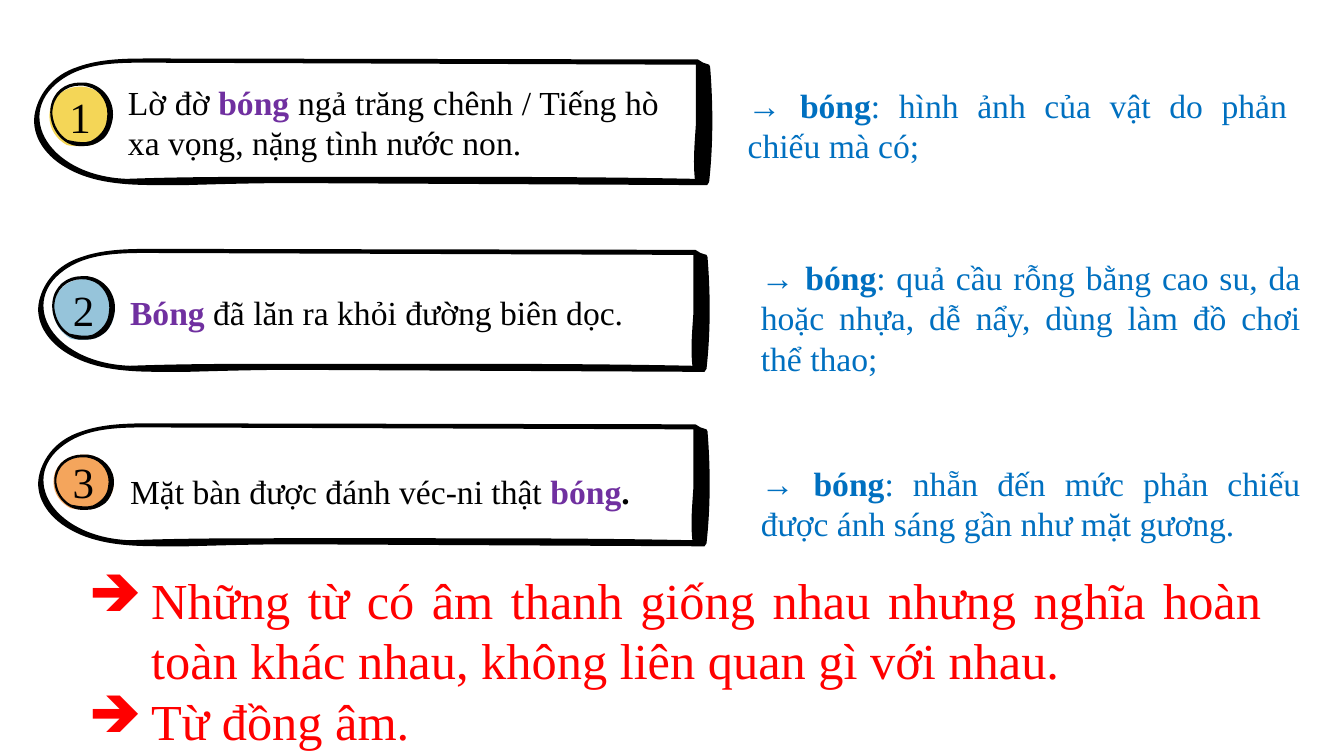
from dataclasses import dataclass
from typing import Any

import lxml.etree
import pptx
import pptx.dml.color
import pptx.enum.text
import pptx.oxml
import pptx.oxml.ns
import pptx.util

COLORS = {
    "ink": "000000",
    "keyword": "7030A0",
    "meaning": "0070C0",
    "conclusion": "FF0000",
    "yellow": "F4D657",
    "blue": "96C4DA",
    "orange": "F4A55C",
}
FONT = "Times New Roman"
ALIGN = pptx.enum.text.PP_ALIGN
ANCHOR = pptx.enum.text.MSO_ANCHOR
WIDE_INSET = 9.4
HANGING = 44.6

Contour = list[tuple[float, ...]]

BANNER: list[Contour] = [
    [
        (78.1, 0),
        (62.3, 0, 45.7, 0.7, 31.3, 5.8),
        (13.3, 11.5, 4, 24.5, 1.1, 36.7),
        (-2.5, 51.1, 6.1, 66.2, 22.7, 75.6),
        (41.4, 86.4, 64.4, 87.8, 87.5, 87.8),
        (107.6, 87.8),
        (132.8, 87.1, 157.3, 86.4, 182.5, 86.4),
        (469.1, 87.8), (476.3, 87.8), (477.7, 85.7),
        (480.6, 59.8, 480.6, 32.4, 478.4, 5.8),
        (477.7, 4.3), (473.4, 2.9), (469.8, 0.7), (95.4, 0),
    ],
    [
        (76.7, 2.9), (468.4, 4.3), (468.4, 44.6),
        (467.6, 57.6, 466.2, 70.6, 467.6, 83.5),
        (400, 82.1, 332.3, 82.1, 264.6, 82.1),
        (179.6, 82.1),
        (141.5, 82.1, 104, 82.1, 65.9, 83.5),
        (7.6, 81.4, -17.6, 33.1, 26.3, 10.8),
        (40.7, 3.6, 58.7, 2.9, 76.7, 2.9),
    ],
]
DISC: list[Contour] = [
    [
        (21.6, 0),
        (10.1, 0, 0, 7.9, 0, 21.6),
        (0, 31, 5, 38.2, 12.2, 42.5),
        (17, 43.7, 24, 43.7, 29.5, 42.5),
        (36, 40.3, 41.8, 34.6, 43.2, 26.6),
        (45.4, 15.1, 38.2, 3.6, 27.4, 0.7),
        (25.2, 0, 23.8, 0, 21.6, 0),
    ],
]
RING: list[Contour] = [
    [
        (20.9, 0),
        (10.8, 0, 1.4, 6.5, 0, 18.7),
        (-1.4, 32.4, 8.6, 45.4, 20.9, 45.4),
        (23.8, 45.4),
        (28.8, 45.4, 33.1, 43.9, 36.7, 41),
        (41, 38.2, 43.9, 31, 44.6, 25.2),
        (46.1, 11.5, 36, 1.4, 25.2, 0),
    ],
    [
        (20.9, 2.2),
        (23, 2.2, 24.5, 2.2, 26.6, 2.9),
        (36, 5, 42.5, 15.8, 40.3, 26.6),
        (39.6, 33.8, 34.6, 38.9, 28.8, 41.8),
        (24.5, 43.2, 18.7, 42.5, 12.2, 41),
        (6.5, 37.4, 2.2, 31, 1.4, 22.3),
        (1.4, 9.4, 10.8, 2.2, 20.9, 2.2),
    ],
]


@dataclass(frozen=True)
class Placement:
    left: float
    top: float
    x_scale: float = 1
    y_scale: float = 1

    def locate(self, x: float, y: float) -> tuple[int, int]:
        return (pptx.util.Pt(self.left + x * self.x_scale), pptx.util.Pt(self.top + y * self.y_scale))


@dataclass(frozen=True)
class Box:
    left: float
    top: float
    width: float
    height: float


@dataclass(frozen=True)
class Run:
    text: str
    color: str = "ink"
    bold: bool = False


@dataclass(frozen=True)
class Example:
    number: str
    color: str
    disc: Placement
    ring: Placement
    banner: Placement
    sentence_box: Box
    sentence: list[Run]
    sentence_align: Any
    meaning_box: Box
    meaning: str


EXAMPLES = [
    Example("1", "yellow", Placement(35.3, 61.9, 1.02, 0.98), Placement(36, 59),
            Placement(24.1, 41.8, 1.01, 1.03), Box(82, 49, 398, 36),
            [Run("Lờ đờ "), Run("bóng ", "keyword", True),
             Run("ngả trăng chênh / Tiếng hò xa vọng, nặng tình nước non.")],
            ALIGN.JUSTIFY, Box(527, 56.9, 399.6, 65.5),
            ": hình ảnh của vật do phản chiếu mà có;"),
    Example("2", "blue", Placement(38.2, 199.4), Placement(37.4, 197.3),
            Placement(27, 177.8), Box(83.5, 199.4, 437.8, 36),
            [Run("Bóng ", "keyword", True), Run("đã lăn ra khỏi đường biên dọc.")],
            ALIGN.LEFT, Box(536.4, 180, 399.6, 94.3),
            ": quả cầu rỗng bằng cao su, da hoặc nhựa, dễ nẩy, dùng làm đồ chơi thể thao;"),
    Example("3", "orange", Placement(38.2, 324.7, 0.99, 0.9), Placement(38.9, 324.7, 0.95, 0.87),
            Placement(27, 302.4), Box(83.5, 326.9, 437.8, 36),
            [Run("Mặt bàn được đánh véc-ni thật "), Run("bóng", "keyword", True),
             Run(".", "ink", True)],
            ALIGN.LEFT, Box(536.4, 326.9, 399.6, 65.5),
            ": nhẵn đến mức phản chiếu được ánh sáng gần như mặt gương."),
]
CONCLUSIONS = [
    "Những từ có âm thanh giống nhau nhưng nghĩa hoàn toàn khác nhau, không liên quan gì với nhau.",
    "Từ đồng âm.",
]


def rgb(color: str) -> pptx.dml.color.RGBColor:
    return pptx.dml.color.RGBColor.from_string(COLORS[color])


def apply_format(target: Any, values: dict[str, Any]) -> None:
    for attribute, value in values.items():
        setattr(target, attribute, value)


def bend(outline: Any, contours: list[Contour], place: Placement) -> None:
    qn = pptx.oxml.ns.qn
    segments = [segment for contour in contours for segment in contour[1:]]
    lines = list(outline._element.iter(qn("a:lnTo")))
    for line, segment in zip(lines, segments):
        if len(segment) == 2:
            continue
        curve = lxml.etree.Element(qn("a:cubicBezTo"))
        for x, y in zip(segment[::2], segment[1::2]):
            across, down = place.locate(x, y)
            lxml.etree.SubElement(curve, qn("a:pt"), x=str(across - outline.left), y=str(down - outline.top))
        line.getparent().replace(line, curve)


def draw_outline(shapes: Any, contours: list[Contour], place: Placement, color: str) -> Any:
    first, *holes = [[place.locate(*segment[-2:]) for segment in contour] for contour in contours]
    builder = shapes.build_freeform(*first[0])
    builder.add_line_segments(first[1:], close=True)
    for hole in holes:
        builder.move_to(*hole[0])
        builder.add_line_segments(hole[1:], close=True)
    outline = builder.convert_to_shape()
    bend(outline, contours, place)
    outline.shadow.inherit = False
    outline.fill.solid()
    outline.fill.fore_color.rgb = rgb(color)
    outline.line.fill.background()
    return outline


def write(frame: Any, paragraphs: list[list[Run]], size: float, align: Any, anchor: Any,
          inset: float | None = None) -> None:
    apply_format(frame, {"word_wrap": True, "vertical_anchor": anchor})
    if inset is not None:
        sides = ("margin_left", "margin_top", "margin_right", "margin_bottom")
        apply_format(frame, dict.fromkeys(sides, pptx.util.Pt(inset)))
    for index, runs in enumerate(paragraphs):
        paragraph = frame.add_paragraph() if index else frame.paragraphs[0]
        paragraph.alignment = align
        for part in runs:
            run = paragraph.add_run()
            run.text = part.text
            apply_format(run.font, {"name": FONT, "size": pptx.util.Pt(size), "bold": part.bold})
            run.font.color.rgb = rgb(part.color)


def add_text(shapes: Any, box: Box) -> Any:
    return shapes.add_textbox(*map(pptx.util.Pt, (box.left, box.top, box.width, box.height))).text_frame


def add_arrow_bullet(paragraph: Any) -> None:
    properties = paragraph._p.get_or_add_pPr()
    properties.set("marL", str(pptx.util.Pt(HANGING)))
    properties.set("indent", str(-pptx.util.Pt(HANGING)))
    lxml.etree.SubElement(properties, pptx.oxml.ns.qn("a:buChar"), char="➔")


def draw_example(shapes: Any, example: Example) -> None:
    disc = draw_outline(shapes, DISC, example.disc, example.color)
    write(disc.text_frame, [[Run(example.number)]], 30.7, ALIGN.CENTER, ANCHOR.MIDDLE, WIDE_INSET)
    draw_outline(shapes, RING, example.ring, "ink")
    draw_outline(shapes, BANNER, example.banner, "ink")
    write(add_text(shapes, example.sentence_box), [example.sentence], 24,
          example.sentence_align, ANCHOR.TOP, WIDE_INSET)


def main() -> None:
    deck = pptx.Presentation()
    apply_format(deck, {"slide_width": pptx.util.Pt(960), "slide_height": pptx.util.Pt(540)})
    shapes = deck.slides.add_slide(deck.slide_layouts[6]).shapes

    conclusion = add_text(shapes, Box(54, 450, 856.8, 42.5))
    write(conclusion, [[Run(text, "conclusion")] for text in CONCLUSIONS], 36,
          ALIGN.JUSTIFY, ANCHOR.MIDDLE, WIDE_INSET)
    for paragraph in conclusion.paragraphs:
        add_arrow_bullet(paragraph)

    for example in EXAMPLES:
        draw_example(shapes.add_group_shape().shapes, example)
    for example in EXAMPLES:
        meaning = add_text(shapes, example.meaning_box)
        runs = [Run("→ ", "meaning"), Run("bóng", "meaning", True), Run(example.meaning, "meaning")]
        write(meaning, [runs], 24, ALIGN.JUSTIFY, ANCHOR.TOP)
        meaning.auto_size = pptx.enum.text.MSO_AUTO_SIZE.SHAPE_TO_FIT_TEXT
    deck.save("out.pptx")


if __name__ == "__main__":
    main()
